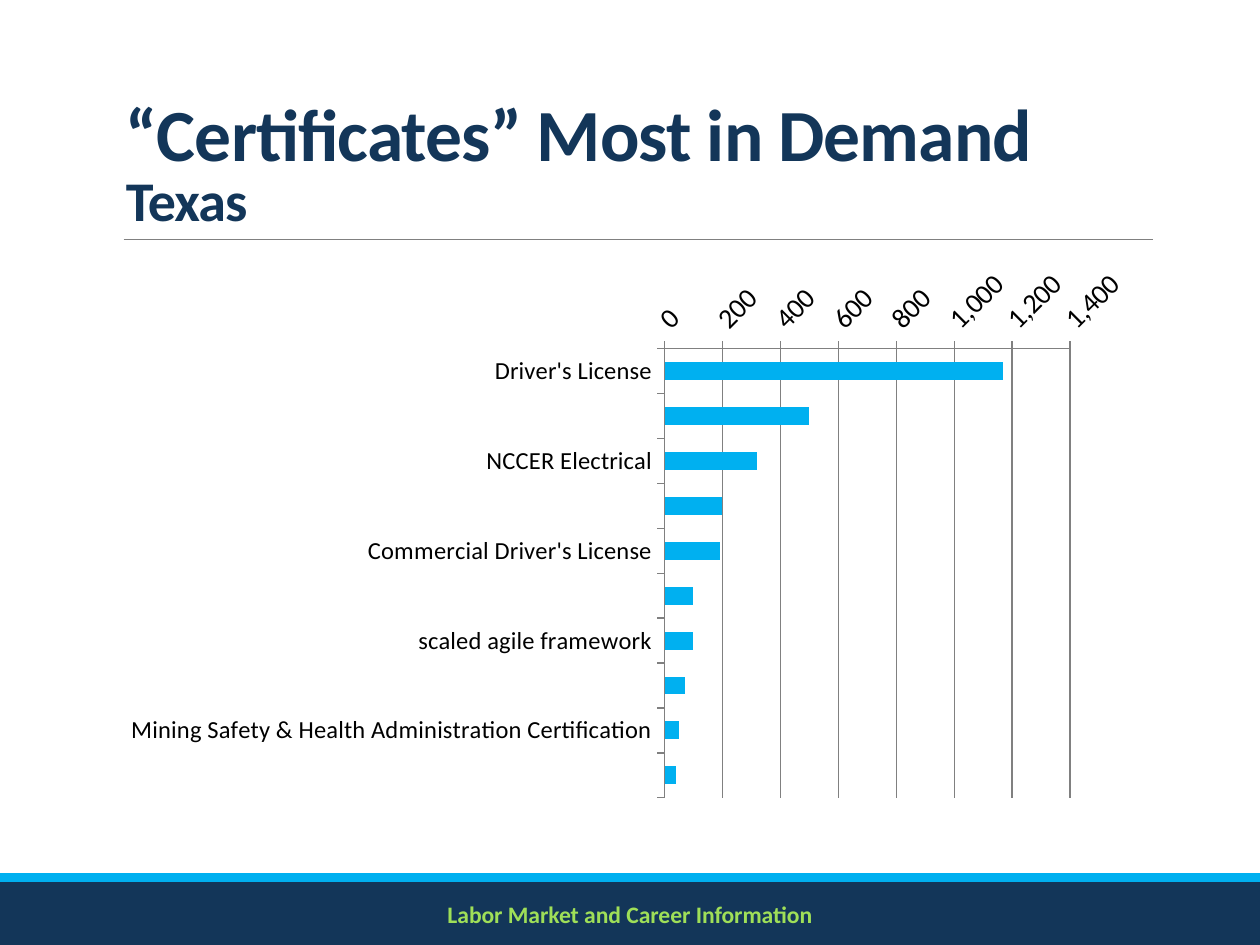
from lxml.etree import SubElement
from pptx import Presentation
from pptx.chart.data import CategoryChartData
from pptx.dml.color import RGBColor
from pptx.enum.chart import XL_CHART_TYPE, XL_TICK_MARK
from pptx.enum.shapes import MSO_CONNECTOR, MSO_SHAPE
from pptx.enum.text import MSO_ANCHOR, PP_ALIGN
from pptx.oxml.ns import qn
from pptx.util import Cm, Pt

NAVY = RGBColor(0x13, 0x36, 0x59)
BLUE = RGBColor(0x00, 0xB0, 0xF0)
GREEN = RGBColor(0x9F, 0xDF, 0x58)
GRAY = RGBColor(0x80, 0x80, 0x80)
BLACK = RGBColor(0, 0, 0)

DEMAND = {
    "Driver's License": 1170,
    "National Electrical Code": 500,
    "NCCER Electrical": 320,
    "Occupational Safety & Health Administration Certification": 200,
    "Commercial Driver's License": 190,
    "National Fire Protection Association Standards": 100,
    "scaled agile framework": 100,
    "Secret Clearance": 70,
    "Mining Safety & Health Administration Certification": 50,
    "Continuing Education": 40,
}


class Deck:
    font = "Calibri"

    def __init__(self, slide):
        self.slide = slide
        self.shapes = slide.shapes

    def band(self, top, height, color):
        band = self.shapes.add_shape(
            MSO_SHAPE.RECTANGLE, 0, Cm(top), Cm(25.4), Cm(height))
        band.shadow.inherit = False
        band.fill.solid()
        band.fill.fore_color.rgb = color
        band.line.fill.background()

    def rule(self, left, right, top):
        rule = self.shapes.add_connector(
            MSO_CONNECTOR.STRAIGHT, Cm(left), Cm(top), Cm(right), Cm(top))
        rule.line.color.rgb = GRAY
        rule.line.width = Pt(0.5)
        SubElement(rule._element.spPr, qn("a:effectLst"))

    def text(self, box, lines, color, anchor, align=PP_ALIGN.LEFT,
             space=1.0, track=0):
        frame = self.shapes.add_textbox(*map(Cm, box)).text_frame
        frame.word_wrap = True
        frame.vertical_anchor = anchor
        para = frame.paragraphs[0]
        para.alignment = align
        para.line_spacing = space
        para.font.name = self.font
        para.font.bold = True
        para.font.color.rgb = color
        for count, (words, size) in enumerate(lines):
            if count:
                para.add_line_break()
            run = para.add_run()
            run.text = words
            run.font.size = Pt(size)
            if track:
                run._r.get_or_add_rPr().set("spc", str(track))

    def bars(self, box, values, plot):
        data = CategoryChartData(number_format="#,##0")
        data.categories = list(values)
        data.add_series("Series 1", list(values.values()))
        chart = self.shapes.add_chart(
            XL_CHART_TYPE.BAR_CLUSTERED, *map(Cm, box), data).chart
        chart.has_legend = False
        chart.has_title = False
        chart.font.name = self.font
        chart.font.size = Pt(18)
        chart.font.color.rgb = BLACK
        group = chart.plots[0]
        group.gap_width = 150
        group.vary_by_categories = False
        fill = group.series[0].format.fill
        fill.solid()
        fill.fore_color.rgb = BLUE
        for axis, size in ((chart.category_axis, 14), (chart.value_axis, 16)):
            axis.major_tick_mark = XL_TICK_MARK.OUTSIDE
            axis.minor_tick_mark = XL_TICK_MARK.NONE
            axis.format.line.color.rgb = GRAY
            font = axis.tick_labels.font
            font.name = self.font
            font.size = Pt(size)
            font.color.rgb = BLACK
        chart.category_axis.reverse_order = True
        scale = chart.value_axis
        scale.minimum_scale, scale.maximum_scale = 0, 1400
        scale.major_unit = 200
        scale.has_major_gridlines = True
        scale.major_gridlines.format.line.color.rgb = GRAY
        scale.tick_labels.number_format = "#,##0"
        scale.tick_labels.number_format_is_linked = False
        body = scale._element.find(qn("c:txPr")).find(qn("a:bodyPr"))
        body.set("rot", "-2700000")
        self.place(chart, plot)

    def place(self, chart, plot):
        area = chart._chartSpace.chart.plotArea
        layout = area.find(qn("c:layout"))
        if layout is None:
            layout = SubElement(area, qn("c:layout"))
            area.insert(0, layout)
        manual = SubElement(layout, qn("c:manualLayout"))
        parts = [("layoutTarget", "inner"), ("xMode", "edge"), ("yMode", "edge")]
        for tag, value in parts + list(zip("xywh", plot)):
            SubElement(manual, qn(f"c:{tag}")).set("val", str(value))


def main():
    show = Presentation()
    show.slide_width, show.slide_height = Cm(25.4), Cm(19.05)
    deck = Deck(show.slides.add_slide(show.slide_layouts[6]))
    deck.band(17.78, 1.27, NAVY)
    deck.band(17.6, 0.18, BLUE)
    deck.rule(2.49, 23.24, 4.83)
    deck.text((0, 17.98, 25.4, 0.89),
              [("Labor Market and Career Information", 13.5)],
              GREEN, MSO_ANCHOR.MIDDLE, PP_ALIGN.CENTER)
    deck.text((2.29, 0.79, 20.96, 4.04),
              [("“Certificates” Most in Demand", 42), ("Texas", 32)],
              NAVY, MSO_ANCHOR.BOTTOM, space=0.85, track=-50)
    deck.bars((2.29, 5.13, 20.96, 11.18), DEMAND, (0.53, 0.17, 0.39, 0.81))
    show.save("out.pptx")


if __name__ == "__main__":
    main()
